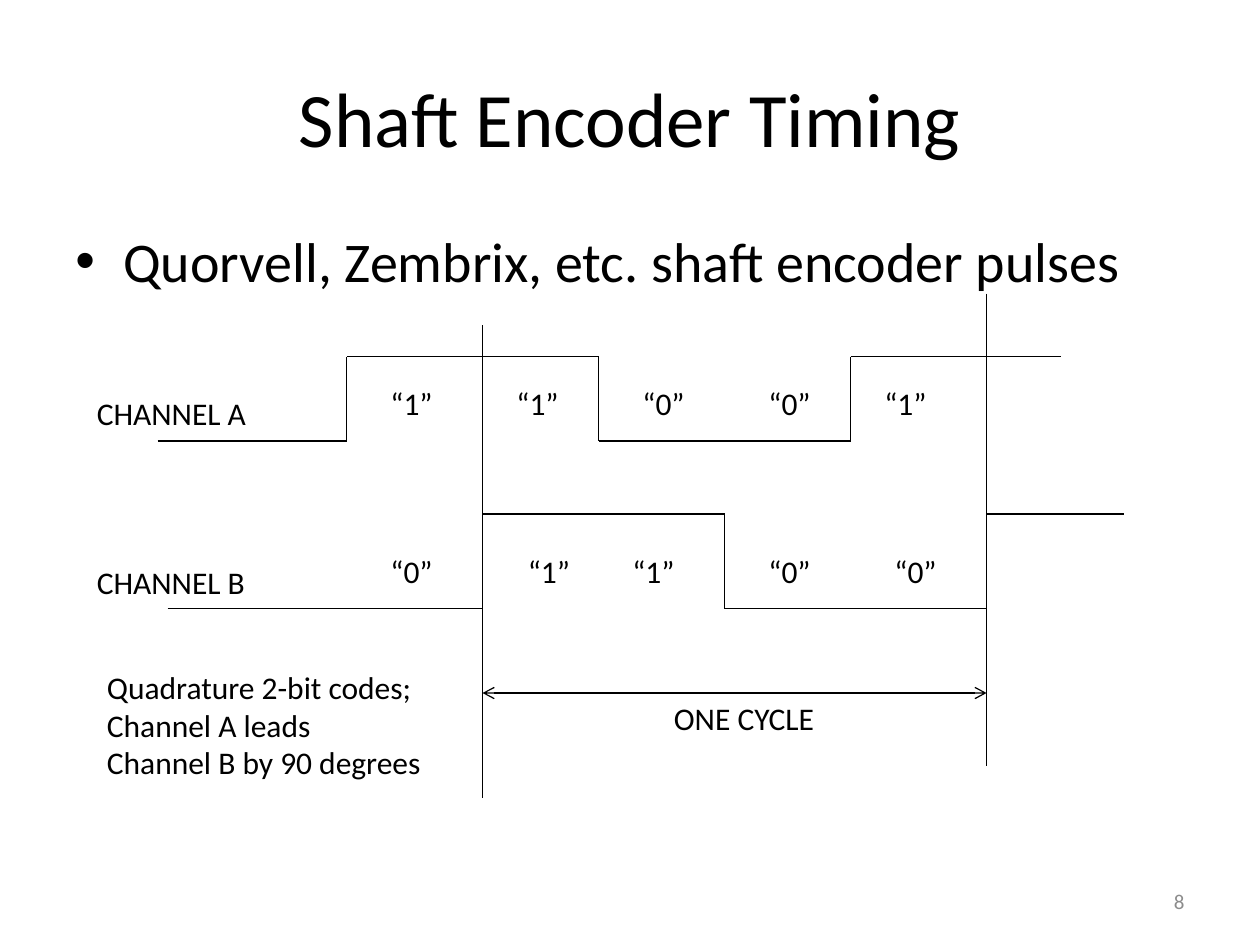
from dataclasses import dataclass
from itertools import pairwise

from lxml.etree import SubElement
from pptx import Presentation
from pptx.dml.color import RGBColor as RGB
from pptx.enum.shapes import MSO_CONNECTOR as Connector
from pptx.enum.text import MSO_ANCHOR as Anchor, MSO_AUTO_SIZE as AutoSize, PP_ALIGN as Align
from pptx.oxml.ns import qn
from pptx.util import Inches, Pt


@dataclass(frozen=True)
class Theme:
    font: str = "Calibri"
    ink: RGB = RGB(0x00, 0x00, 0x00)
    edge: RGB = RGB(0xEF, 0x9F, 0x28)
    muted: RGB = RGB(0x8C, 0x8C, 0x8C)
    title: int = 44
    body: int = 32
    label: int = 18
    number: int = 12
    stroke: float = 0.75


class TimingSlide:
    def __init__(self, slide, theme):
        self.slide = slide
        self.theme = theme

    def text(self, words, left, top, width, height, size, color=None,
             align=Align.LEFT, anchor=Anchor.TOP):
        box = self.slide.shapes.add_textbox(
            Inches(left), Inches(top), Inches(width), Inches(height))
        frame = box.text_frame
        frame.word_wrap = True
        frame.vertical_anchor = anchor
        frame.text = words
        for paragraph in frame.paragraphs:
            paragraph.alignment = align
            paragraph.font.name = self.theme.font
            paragraph.font.size = Pt(size)
            paragraph.font.color.rgb = color or self.theme.ink
        return frame

    def label(self, words, left, top, width, height=0.4):
        frame = self.text(words, left, top, width, height, self.theme.label)
        frame.auto_size = AutoSize.SHAPE_TO_FIT_TEXT

    def bullet(self, words, left, top, width, height):
        frame = self.text(words, left, top, width, height, self.theme.body)
        paragraph = frame.paragraphs[0]
        paragraph.space_before = Pt(self.theme.body * 0.2)
        properties = paragraph._p.get_or_add_pPr()
        properties.set("marL", str(Inches(0.38)))
        properties.set("indent", str(-Inches(0.38)))
        SubElement(properties, qn("a:buFont"), typeface="Arial")
        SubElement(properties, qn("a:buChar"), char="•")

    def line(self, start, end, color=None, arrows=False):
        ends = [Inches(value) for value in (*start, *end)]
        stroke = self.slide.shapes.add_connector(Connector.STRAIGHT, *ends)
        stroke.line.color.rgb = color or self.theme.ink
        stroke.line.width = Pt(self.theme.stroke)
        if arrows:
            outline = stroke.line._get_or_add_ln()
            for tip in ("a:headEnd", "a:tailEnd"):
                SubElement(outline, qn(tip), type="arrow")
        SubElement(stroke._element.spPr, qn("a:effectLst"))

    def waveform(self, start, edges, end, low, high, marked=()):
        levels = (low, high)
        points = [(start, low)]
        for index, edge in enumerate(edges):
            before = levels[index % 2]
            after = levels[(index + 1) % 2]
            points += [(edge, before), (edge, after)]
        points.append((end, levels[len(edges) % 2]))
        for tail, head in pairwise(points):
            is_marked = tail[0] == head[0] and tail[0] in marked
            self.line(tail, head, self.theme.edge if is_marked else None)


def main():
    theme = Theme()
    deck = Presentation()
    deck.slide_width, deck.slide_height = Inches(10), Inches(7.5)
    timing = TimingSlide(deck.slides.add_slide(deck.slide_layouts[6]), theme)

    timing.text("Shaft Encoder Timing", 0.5, 0.3, 9, 1.25, theme.title,
                align=Align.CENTER, anchor=Anchor.MIDDLE)
    timing.bullet("Quorvell, Zembrix, etc. shaft encoder pulses", 0.5, 1.75, 9, 4.95)
    timing.text("8", 7.17, 6.95, 2.33, 0.4, theme.number, theme.muted,
                Align.RIGHT, Anchor.MIDDLE)

    cycle_start, cycle_end = 3.83, 7.83
    timing.waveform(1.25, (2.75, 4.75, 6.75), 8.42, low=3.5, high=2.83)
    timing.waveform(1.33, (cycle_start, 5.75, cycle_end), 8.92, low=4.83, high=4.08,
                    marked=(cycle_start, cycle_end))
    for boundary, top in ((cycle_start, 2.58), (cycle_end, 2.33)):
        timing.line((boundary, top), (boundary, top + 3.75))
    timing.line((cycle_start, 5.5), (cycle_end, 5.5), arrows=True)

    channels = (
        ("CHANNEL A", 3.08, 3, "11001", (3, 4, 5, 6, 6.92)),
        ("CHANNEL B", 4.42, 4.33, "01100", (3, 4.09, 4.92, 6, 7)),
    )
    for channel, name_top, bit_top, bits, lefts in channels:
        timing.label(channel, 0.67, name_top, 2)
        for bit, left in zip(bits, lefts):
            timing.label(f"“{bit}”", left, bit_top, 0.75)

    timing.label("ONE CYCLE", 5.25, 5.5, 2.42)
    timing.label("Quadrature 2-bit codes;\nChannel A leads\nChannel B by 90 degrees",
                 0.75, 5.25, 2.75, 1.01)

    deck.save("out.pptx")


if __name__ == "__main__":
    main()
